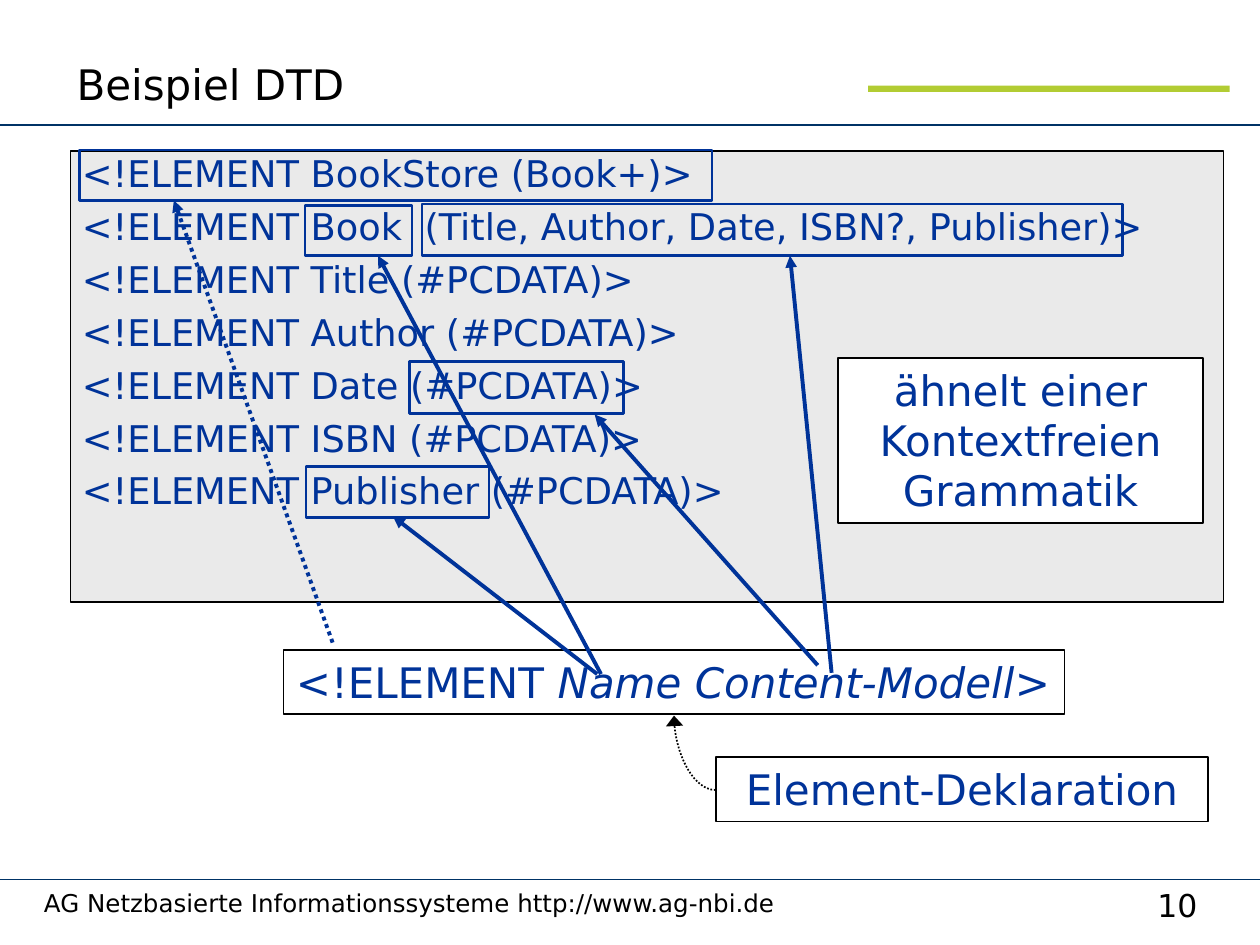
import pptx
import pptx.dml.color
import pptx.enum.dml
import pptx.enum.shapes
import pptx.enum.text
import pptx.oxml.ns
import pptx.util
from lxml import etree
from pptx.util import Inches

RGBColor = pptx.dml.color.RGBColor
ALIGN = pptx.enum.text.PP_ALIGN
ANCHOR = pptx.enum.text.MSO_ANCHOR
CONNECTOR = pptx.enum.shapes.MSO_CONNECTOR
qn = pptx.oxml.ns.qn

BLACK = RGBColor(0x00, 0x00, 0x00)
WHITE = RGBColor(0xFF, 0xFF, 0xFF)
GREY = RGBColor(0xEA, 0xEA, 0xEA)
BLUE = RGBColor(0x00, 0x33, 0x99)
NAVY = RGBColor(0x00, 0x33, 0x66)
LIME = RGBColor(0xB2, 0xCC, 0x33)
FONT = "DejaVu Sans"

DECLARATIONS = [
    "<!ELEMENT BookStore (Book+)>",
    "<!ELEMENT Book\t(Title, Author, Date, ISBN?, Publisher)>",
    "<!ELEMENT Title (#PCDATA)>",
    "<!ELEMENT Author (#PCDATA)>",
    "<!ELEMENT Date (#PCDATA)>",
    "<!ELEMENT ISBN (#PCDATA)>",
    "<!ELEMENT Publisher (#PCDATA)>",
]
HIGHLIGHTS = [
    (0.63, 1.19, 5.02, 0.4),
    (2.42, 1.63, 0.85, 0.4),
    (2.43, 3.7, 1.45, 0.41),
    (3.35, 1.62, 5.56, 0.41),
    (3.25, 2.87, 1.7, 0.41),
]
ARROWS = [
    (6.6, 5.34, 6.27, 2.03),
    (4.74, 5.35, 3.12, 4.1),
    (4.77, 5.35, 3, 2.03),
    (6.49, 5.28, 4.72, 3.29),
]


def style_font(paragraph, size, color):
    """Set the typeface, size and colour of a whole paragraph."""
    paragraph.font.name = FONT
    paragraph.font.size = pptx.util.Pt(size)
    paragraph.font.color.rgb = color


def add_box(slide, box, fill=None, line=None, width=1):
    """Add a rectangle with an optional fill and outline."""
    kind = pptx.enum.shapes.MSO_SHAPE.RECTANGLE
    shape = slide.shapes.add_shape(kind, *map(Inches, box))
    shape.shadow.inherit = False
    if fill is None:
        shape.fill.background()
    else:
        shape.fill.solid()
        shape.fill.fore_color.rgb = fill
    if line is None:
        shape.line.fill.background()
    else:
        shape.line.color.rgb = line
        shape.line.width = pptx.util.Pt(width)
    return shape


def add_label(slide, box, text, size, align=ALIGN.LEFT, anchor=ANCHOR.TOP):
    """Add a black text box without outline."""
    frame = slide.shapes.add_textbox(*map(Inches, box)).text_frame
    frame.word_wrap = True
    frame.vertical_anchor = anchor
    paragraph = frame.paragraphs[0]
    paragraph.text = text
    paragraph.alignment = align
    style_font(paragraph, size, BLACK)


def add_note(slide, box, runs, fill=None, wrap=True):
    """Add an outlined box with blue text, given as (text, italic) runs."""
    frame = add_box(slide, box, fill, BLACK).text_frame
    frame.word_wrap = wrap
    frame.vertical_anchor = ANCHOR.TOP
    paragraph = frame.paragraphs[0]
    paragraph.alignment = ALIGN.CENTER if wrap else ALIGN.LEFT
    style_font(paragraph, 24, BLUE)
    for text, italic in runs:
        run = paragraph.add_run()
        run.text = text
        run.font.italic = italic


def add_code(slide, box, lines):
    """Add the grey panel with one declaration per paragraph."""
    frame = add_box(slide, box, GREY, BLACK).text_frame
    frame.word_wrap = True
    frame.vertical_anchor = ANCHOR.TOP
    frame.margin_left = Inches(0.09)
    frame.margin_top = frame.margin_right = frame.margin_bottom = 0
    for index, line in enumerate(lines):
        paragraph = frame.add_paragraph() if index else frame.paragraphs[0]
        paragraph.text = line
        paragraph.alignment = ALIGN.LEFT
        paragraph.space_before = pptx.util.Pt(5 if index else 0)
        if "\t" in line:
            properties = paragraph._p.get_or_add_pPr()
            tabs = etree.SubElement(properties, qn("a:tabLst"))
            etree.SubElement(tabs, qn("a:tab"), pos=str(Inches(2.72)), algn="l")
        style_font(paragraph, 21, BLUE)


def add_line(slide, ends, color, width, kind=CONNECTOR.STRAIGHT, dotted=False):
    """Add a connector without shadow."""
    connector = slide.shapes.add_connector(kind, *map(Inches, ends))
    connector.line.color.rgb = color
    connector.line.width = pptx.util.Pt(width)
    if dotted:
        connector.line.dash_style = pptx.enum.dml.MSO_LINE.ROUND_DOT
    etree.SubElement(connector._element.spPr, qn("a:effectLst"))
    return connector


def add_arrow(slide, ends, color, width, kind=CONNECTOR.STRAIGHT, dotted=False, head="med"):
    """Add a connector with a triangle at its end."""
    connector = add_line(slide, ends, color, width, kind, dotted)
    outline = connector.line._get_or_add_ln()
    etree.SubElement(outline, qn("a:tailEnd"), type="triangle", w=head, len="med")
    return connector


def main():
    """Build the slide and save it."""
    presentation = pptx.Presentation()
    presentation.slide_width = Inches(10)
    presentation.slide_height = Inches(7.5)
    slide = presentation.slides.add_slide(presentation.slide_layouts[6])

    add_box(slide, (6.89, 0.68, 2.87, 0.05), LIME)
    for y in (6.98, 0.99):
        add_line(slide, (0, y, 10, y), NAVY, 1)
    add_label(slide, (8.94, 6.98, 0.81, 0.4), "10", 18, ALIGN.CENTER)
    add_label(slide, (0.51, 0, 8.03, 0.91), "Beispiel DTD", 24, anchor=ANCHOR.BOTTOM)
    footer = "AG Netzbasierte Informationssysteme http://www.ag-nbi.de"
    add_label(slide, (0.25, 7, 8.69, 0.33), footer, 14)

    add_code(slide, (0.56, 1.2, 9.15, 3.58), DECLARATIONS)
    grammar = [("ähnelt einer Kontextfreien Grammatik", False)]
    add_note(slide, (6.65, 2.84, 2.9, 1.31), grammar, WHITE)
    pattern = [("<!ELEMENT ", False), ("Name Content-Modell", True), (">", False)]
    add_note(slide, (2.25, 5.16, 6.2, 0.51), pattern, wrap=False)
    add_note(slide, (5.68, 6.01, 3.91, 0.51), [("Element-Deklaration", False)], WHITE)

    curve = add_arrow(slide, (5.68, 6.27, 5.35, 5.68), BLACK, 1, CONNECTOR.CURVE, True, "lg")
    curve._element.spPr.find(qn("a:prstGeom")).set("prst", "curvedConnector2")
    for ends in ARROWS:
        add_arrow(slide, ends, BLUE, 2.25)
    for box in HIGHLIGHTS:
        add_box(slide, box, line=BLUE, width=1.5)
    add_arrow(slide, (2.64, 5.1, 1.38, 1.59), BLUE, 2.25, dotted=True)

    presentation.save("out.pptx")


if __name__ == "__main__":
    main()
